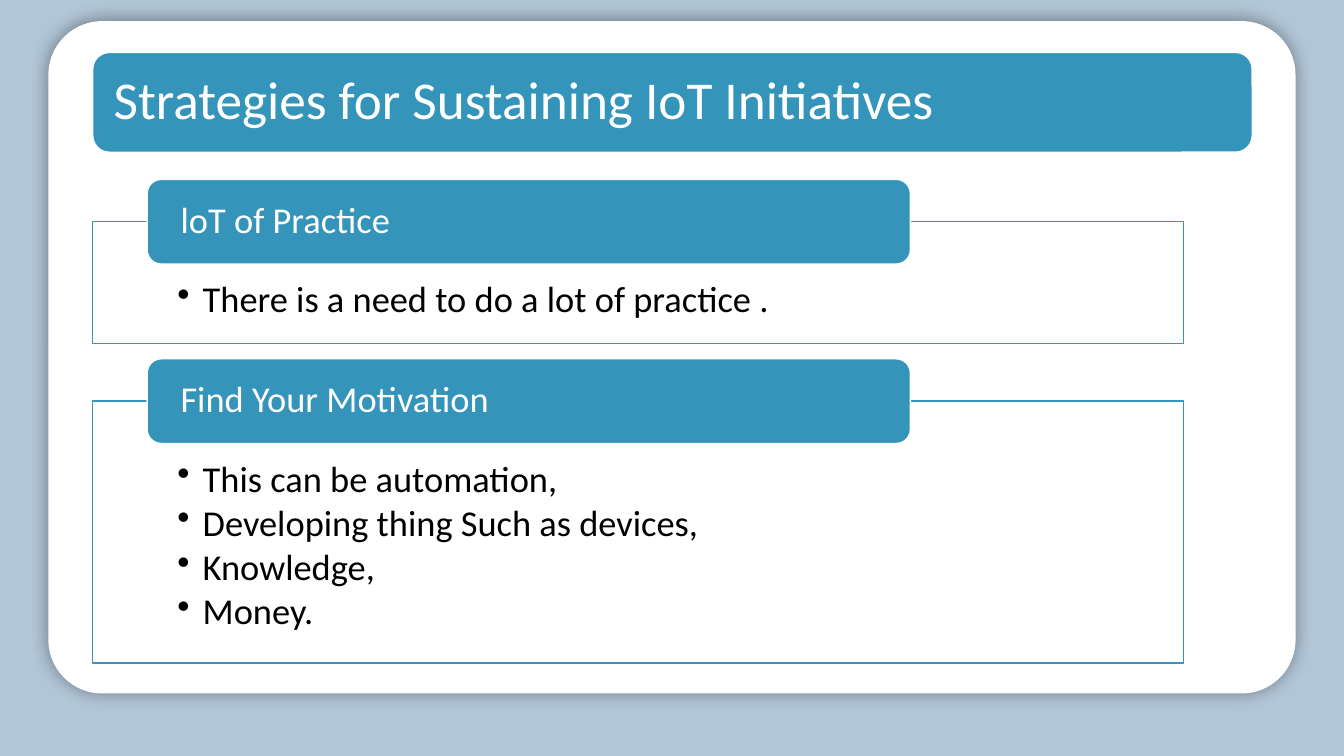
from dataclasses import dataclass

from lxml import etree
from pptx import Presentation
from pptx.dml.color import RGBColor
from pptx.enum.shapes import MSO_SHAPE as SHAPE
from pptx.enum.text import MSO_ANCHOR as ANCHOR, PP_ALIGN as ALIGN
from pptx.oxml import parse_xml
from pptx.oxml.ns import nsdecls, qn
from pptx.shapes.autoshape import Shape
from pptx.slide import Slide
from pptx.util import Emu, Pt

PX = 9144  # 100 px to the inch
COLORS = {
    "backdrop": "B1C6D7",
    "accent": "3494BA",
    "white": "FFFFFF",
    "black": "000000",
}
FONT = "Calibri"
BULLET_INDENT = 25


@dataclass(frozen=True)
class Box:
    left: int
    top: int
    width: int
    height: int


@dataclass(frozen=True)
class Strategy:
    heading: str
    points: tuple[str, ...]
    top: int
    frame_height: int


STRATEGIES = (
    Strategy("loT of Practice", ("There is a need to do a lot of practice .",), 178, 121),
    Strategy(
        "Find Your Motivation",
        (
            "This can be automation,",
            "Developing thing Such as devices,",
            "Knowledge,",
            "Money.",
        ),
        356,
        260,
    ),
)


def px(length: int) -> Emu:
    return Emu(length * PX)


def rgb(name: str) -> RGBColor:
    return RGBColor.from_string(COLORS[name])


def add_box(slide: Slide, kind: SHAPE, box: Box, fill: str, line: str | None = None) -> Shape:
    shape = slide.shapes.add_shape(
        kind, px(box.left), px(box.top), px(box.width), px(box.height)
    )
    shape.shadow.inherit = False
    shape.fill.solid()
    shape.fill.fore_color.rgb = rgb(fill)
    if line:
        shape.line.color.rgb = rgb(line)
        shape.line.width = Pt(1)
    else:
        shape.line.fill.background()
    return shape


def add_soft_shadow(shape: Shape) -> None:
    effects = shape._element.spPr.find(qn("a:effectLst"))
    effects.append(parse_xml(
        f'<a:outerShdw {nsdecls("a")} blurRad="{Pt(13)}" dist="0" dir="0" algn="ctr" '
        f'rotWithShape="0"><a:srgbClr val="{COLORS["black"]}">'
        '<a:alpha val="40000"/></a:srgbClr></a:outerShdw>'
    ))


def write(
    shape: Shape,
    *lines: str,
    size: int = 26,
    color: str = "white",
    anchor: ANCHOR = ANCHOR.MIDDLE,
    side: int = 29,
    above: int = 0,
    below: int = 0,
    bullets: bool = False,
) -> None:
    frame = shape.text_frame
    frame.word_wrap = True
    frame.vertical_anchor = anchor
    frame.margin_left = frame.margin_right = px(side)
    frame.margin_top, frame.margin_bottom = px(above), px(below)
    for index, line in enumerate(lines):
        paragraph = frame.paragraphs[0] if index == 0 else frame.add_paragraph()
        paragraph.alignment = ALIGN.LEFT
        paragraph.line_spacing = 0.9
        run = paragraph.add_run()
        run.text = line
        run.font.name = FONT
        run.font.size = Pt(size)
        run.font.color.rgb = rgb(color)
        if bullets:
            paragraph.space_after = Pt(3.5)
            props = paragraph._p.get_or_add_pPr()
            props.set("marL", str(px(BULLET_INDENT)))
            props.set("indent", str(-px(BULLET_INDENT)))
            etree.SubElement(props, qn("a:buChar")).set("char", "•")


def add_strategy(slide: Slide, strategy: Strategy) -> None:
    # The heading straddles the top edge of its frame
    heading = Box(146, strategy.top, 757, 84)
    frame = Box(92, strategy.top + heading.height // 2, 1082, strategy.frame_height)
    points = add_box(slide, SHAPE.RECTANGLE, frame, "white", "accent")
    write(points, *strategy.points, color="black", anchor=ANCHOR.TOP,
          side=84, above=59, below=20, bullets=True)
    label = add_box(slide, SHAPE.ROUNDED_RECTANGLE, heading, "accent", "white")
    write(label, strategy.heading)


def main() -> None:
    deck = Presentation()
    deck.slide_width, deck.slide_height = px(1333), px(750)
    slide = deck.slides.add_slide(deck.slide_layouts[6])

    # Backdrop and white panel
    slide.background.fill.solid()
    slide.background.fill.fore_color.rgb = rgb("backdrop")
    panel = add_box(slide, SHAPE.ROUNDED_RECTANGLE, Box(48, 21, 1237, 667), "white")
    panel.adjustments[0] = 0.08
    add_soft_shadow(panel)

    # Title bar
    title = add_box(slide, SHAPE.ROUNDED_RECTANGLE, Box(92, 52, 1150, 99), "accent", "white")
    write(title, "Strategies for Sustaining IoT Initiatives",
          size=38, side=16, above=16, below=16)

    # Strategies
    for strategy in STRATEGIES:
        add_strategy(slide, strategy)

    deck.save("out.pptx")


if __name__ == "__main__":
    main()
